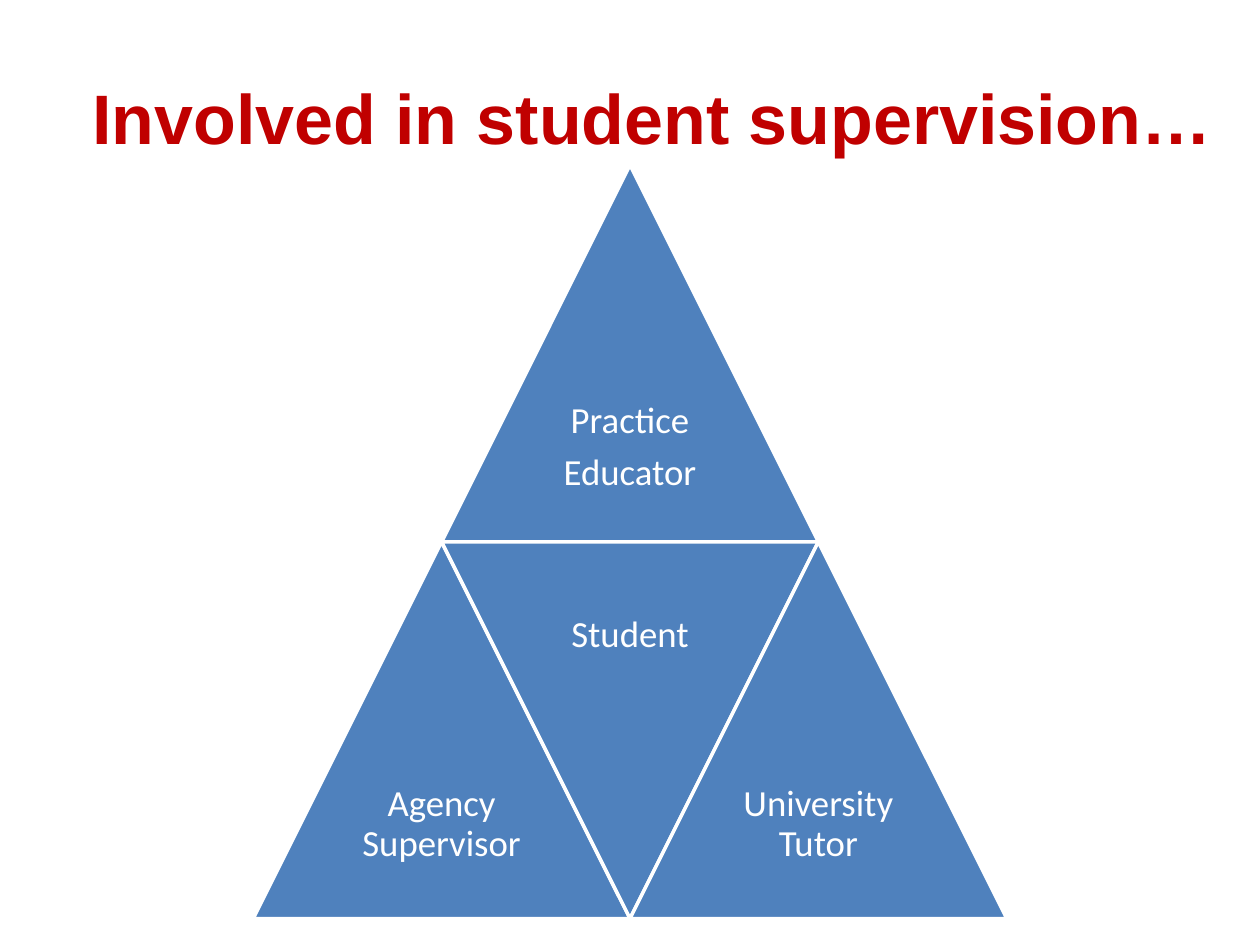
from pptx import Presentation
from pptx.dml.color import RGBColor
from pptx.enum.shapes import MSO_SHAPE
from pptx.enum.text import MSO_ANCHOR, PP_ALIGN
from pptx.util import Inches, Pt

TRIANGLE = MSO_SHAPE.ISOSCELES_TRIANGLE
MIDDLE = MSO_ANCHOR.MIDDLE
CENTER = PP_ALIGN.CENTER

# Content: label paragraphs, column (in half sides from the left), row, inverted
TITLE = "Involved in student supervision…"
ROLES = [
    (["Practice", "Educator"], 1, 0, False),
    (["Agency Supervisor"], 0, 1, False),
    (["Student"], 1, 1, True),
    (["University Tutor"], 2, 1, False),
]

THEME = {
    "title_font": "Arial", "title_size": Pt(40), "title_color": RGBColor(0xC0, 0, 0),
    "label_font": "Calibri", "label_size": Pt(21), "white": RGBColor(255, 255, 255),
    "fill": RGBColor(0x4F, 0x81, 0xBD), "line_width": Pt(2),
}

# Pyramid geometry in inches
SIDE = 2.99
HALF = SIDE / 2
LEFT, TOP = 2.01, 1.31
INSET = Inches(0.09)


def add_triangle(slide, left, top, inverted):
    sp = slide.shapes.add_shape(TRIANGLE, Inches(left), Inches(top), Inches(SIDE), Inches(SIDE))
    sp.rotation = 180 if inverted else 0
    sp.shadow.inherit = False
    sp.fill.solid()
    sp.fill.fore_color.rgb = THEME["fill"]
    sp.line.color.rgb = THEME["white"]
    sp.line.width = THEME["line_width"]


def add_label(slide, lines, left, top):
    box = slide.shapes.add_textbox(Inches(left), Inches(top), Inches(HALF), Inches(HALF))
    tf = box.text_frame
    tf.word_wrap = True
    tf.vertical_anchor = MIDDLE
    tf.margin_left = tf.margin_right = tf.margin_top = tf.margin_bottom = INSET
    tf.text = "\n".join(lines)
    for p in tf.paragraphs:
        p.alignment = CENTER
        p.line_spacing = 0.9
        p.space_after = Pt(7.35)
        p.font.name = THEME["label_font"]
        p.font.size = THEME["label_size"]
        p.font.color.rgb = THEME["white"]


prs = Presentation()
prs.slide_width, prs.slide_height = Inches(10), Inches(7.5)
slide = prs.slides.add_slide(prs.slide_layouts[5])

# Title
title = slide.shapes.title
title.left, title.top = Inches(0.35), Inches(0.3)
title.width, title.height = Inches(9.65), Inches(1.25)
tf = title.text_frame
tf.text = TITLE
tf.vertical_anchor = MIDDLE
p = tf.paragraphs[0]
p.alignment = CENTER
p.font.name = THEME["title_font"]
p.font.size = THEME["title_size"]
p.font.bold = True
p.font.color.rgb = THEME["title_color"]

# Pyramid: each label fills the wide half of its triangle
for lines, column, row, inverted in ROLES:
    left, top = LEFT + column * HALF, TOP + row * SIDE
    add_triangle(slide, left, top, inverted)
    add_label(slide, lines, left + HALF / 2, top if inverted else top + HALF)

prs.save("out.pptx")
